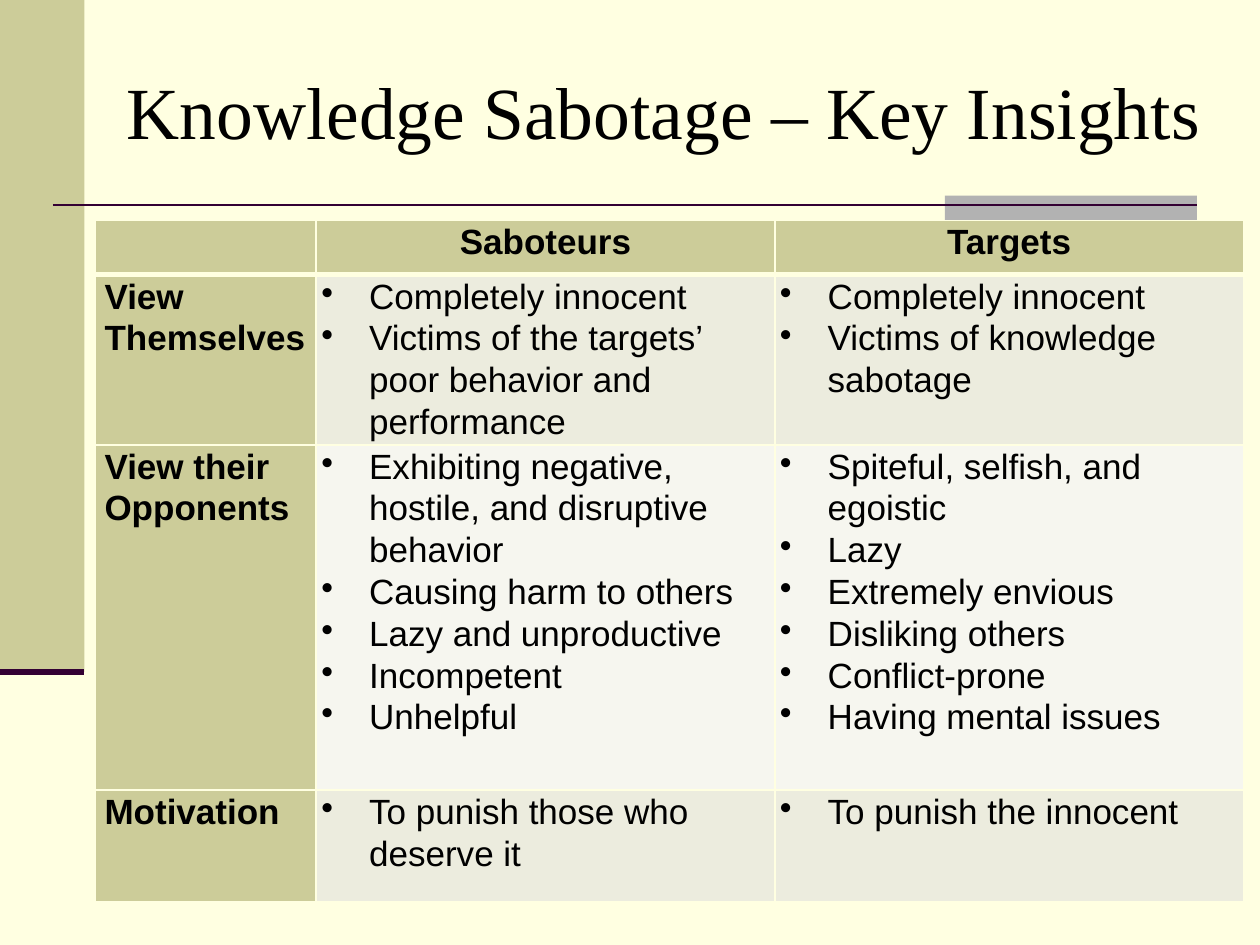
from lxml.etree import SubElement
from pptx import Presentation
from pptx.dml.color import RGBColor
from pptx.enum.shapes import MSO_CONNECTOR as Connector, MSO_SHAPE as Shape
from pptx.enum.text import MSO_ANCHOR as Anchor, MSO_AUTO_SIZE as AutoSize, PP_ALIGN as Align
from pptx.oxml.ns import qn
from pptx.util import Inches, Pt

WIDTH, HEIGHT = 10, 7.5
CREAM, KHAKI, GRAY, PLUM, BLACK = "FFFFE1", "CCCC99", "B2B2B2", "330033", "000000"
BAND_FILLS = ["ECECDE", "F6F6EF"]
BAR_WIDTH, BAR_HEIGHT = 0.067, 0.711
TABLE_LEFT, TABLE_TOP = 0.76, 1.75
COLUMN_WIDTHS = [1.75, 3.64, 3.72]
ROW_HEIGHTS = [0.43, 1.35, 2.74, 0.89]
HANGING = 0.38

HEADERS = ["", "Saboteurs", "Targets"]
INSIGHTS = [
    ("View Themselves",
     ["Completely innocent", "Victims of the targets’ poor behavior and performance"],
     ["Completely innocent", "Victims of knowledge sabotage"]),
    ("View their Opponents",
     ["Exhibiting negative, hostile, and disruptive behavior", "Causing harm to others",
      "Lazy and unproductive", "Incompetent", "Unhelpful"],
     ["Spiteful, selfish, and egoistic", "Lazy", "Extremely envious", "Disliking others",
      "Conflict-prone", "Having mental issues"]),
    ("Motivation", ["To punish those who deserve it"], ["To punish the innocent"]),
]


def color(value):
    """Turn a hex string into a colour."""
    return RGBColor.from_string(value)


def across(share):
    """Give a share of the slide's width as a length."""
    return Inches(WIDTH * share)


def down(share):
    """Give a share of the slide's height as a length."""
    return Inches(HEIGHT * share)


def paint(target, value):
    """Give a slide background, shape or cell a solid fill."""
    target.fill.solid()
    target.fill.fore_color.rgb = color(value)


def write(para, text, font="Arial", size=20, bold=False, align=Align.LEFT, spacing=None, bullet=False):
    """Put formatted text into a paragraph."""
    para.alignment = align
    para.line_spacing = spacing
    if bullet:
        properties = para._p.get_or_add_pPr()
        properties.set("marL", str(Inches(HANGING)))
        properties.set("indent", str(-Inches(HANGING)))
        SubElement(properties, qn("a:buChar"), char="•")
    span = para.add_run()
    span.text = text
    span.font.name, span.font.size, span.font.bold = font, Pt(size), bold
    span.font.color.rgb = color(BLACK)


def add_block(page, left, top, width, height, fill):
    """Add a plain rectangle placed by shares of the slide."""
    block = page.shapes.add_shape(Shape.RECTANGLE, across(left), down(top), across(width), down(height))
    block.shadow.inherit = False
    paint(block, fill)
    block.line.fill.background()


def add_rule(page, start, end, level, weight):
    """Add a horizontal line placed by shares of the slide."""
    rule = page.shapes.add_connector(Connector.STRAIGHT, across(start), down(level), across(end), down(level))
    rule.line.color.rgb = color(PLUM)
    rule.line.width = Pt(weight)
    SubElement(rule._element.spPr, qn("a:effectLst"))


def add_title(page, text):
    """Move and fill the title placeholder."""
    title = page.shapes.title
    title.left, title.top = across(0.075), down(0.033)
    title.width, title.height = across(0.903), down(0.167)
    frame = title.text_frame
    frame.auto_size, frame.word_wrap = AutoSize.NONE, True
    frame.vertical_anchor = Anchor.MIDDLE
    write(frame.paragraphs[0], text, font="Times New Roman", size=42, align=Align.CENTER)


def add_borders(cell, bottom):
    """Draw the four borders of a cell."""
    properties = cell._tc.get_or_add_tcPr()
    for side, weight in zip("LRTB", (1, 1, 1, bottom)):
        edge = SubElement(properties, qn(f"a:ln{side}"), w=str(Pt(weight)))
        fill = SubElement(edge, qn("a:solidFill"))
        SubElement(fill, qn("a:srgbClr"), val=CREAM)


def fill_cell(cell, lines, fill, bottom=1, left=0.07, **style):
    """Set the borders, fill, margins and text of a cell."""
    add_borders(cell, bottom)
    paint(cell, fill)
    cell.margin_left, cell.margin_right = Inches(left), Inches(0.07)
    cell.margin_top = cell.margin_bottom = 0
    for index, line in enumerate(lines):
        para = cell.text_frame.add_paragraph() if index else cell.text_frame.paragraphs[0]
        write(para, line, spacing=1.07, **style)


def add_insights(page):
    """Add the table that compares saboteurs with targets."""
    table = page.shapes.add_table(
        len(ROW_HEIGHTS), len(COLUMN_WIDTHS), Inches(TABLE_LEFT), Inches(TABLE_TOP),
        Inches(sum(COLUMN_WIDTHS)), Inches(sum(ROW_HEIGHTS))).table
    table.first_row = table.horz_banding = False
    for column, width in zip(table.columns, COLUMN_WIDTHS):
        column.width = Inches(width)
    for row, height in zip(table.rows, ROW_HEIGHTS):
        row.height = Inches(height)
    for index, header in enumerate(HEADERS):
        fill_cell(table.cell(0, index), [header] if header else [], KHAKI, bottom=3,
                  bold=True, align=Align.CENTER)
    for row, (topic, *views) in enumerate(INSIGHTS, 1):
        fill_cell(table.cell(row, 0), [topic], KHAKI, bold=True)
        for column, points in enumerate(views, 1):
            fill_cell(table.cell(row, column), points, BAND_FILLS[(row - 1) % 2], left=0.04, bullet=True)


def main():
    """Build the slide and save it."""
    deck = Presentation()
    deck.slide_width, deck.slide_height = Inches(WIDTH), Inches(HEIGHT)
    page = deck.slides.add_slide(deck.slide_layouts.get_by_name("Title Only"))
    paint(page.background, CREAM)
    add_block(page, 0, 0, BAR_WIDTH, BAR_HEIGHT, KHAKI)
    add_block(page, 0.75, 0.207, 0.2, 0.027, GRAY)
    add_rule(page, 0.042, 0.95, 0.217, 1.5)
    add_rule(page, 0, BAR_WIDTH, BAR_HEIGHT, 3.5)
    add_title(page, "Knowledge Sabotage – Key Insights")
    add_insights(page)
    deck.save("out.pptx")


if __name__ == "__main__":
    main()
